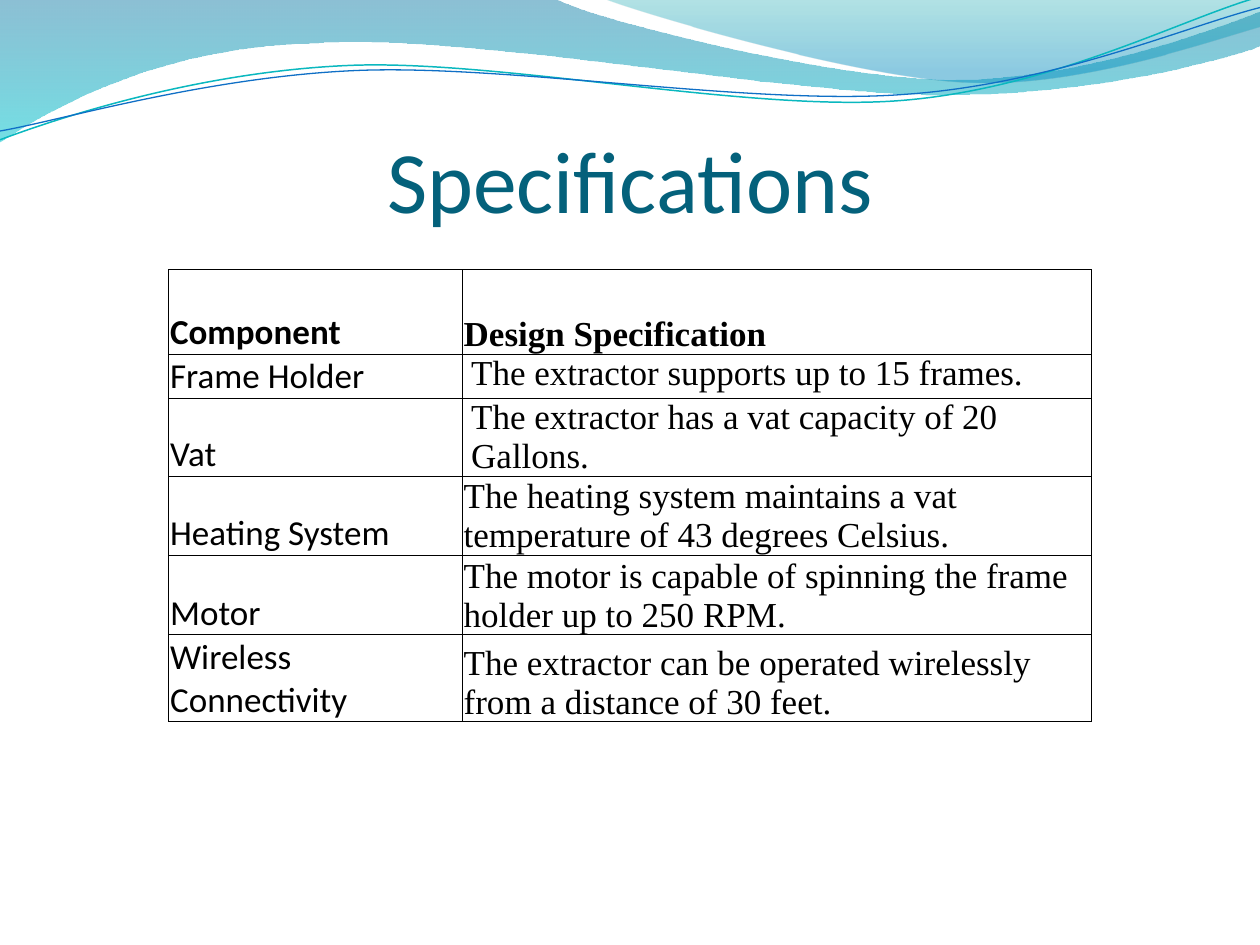
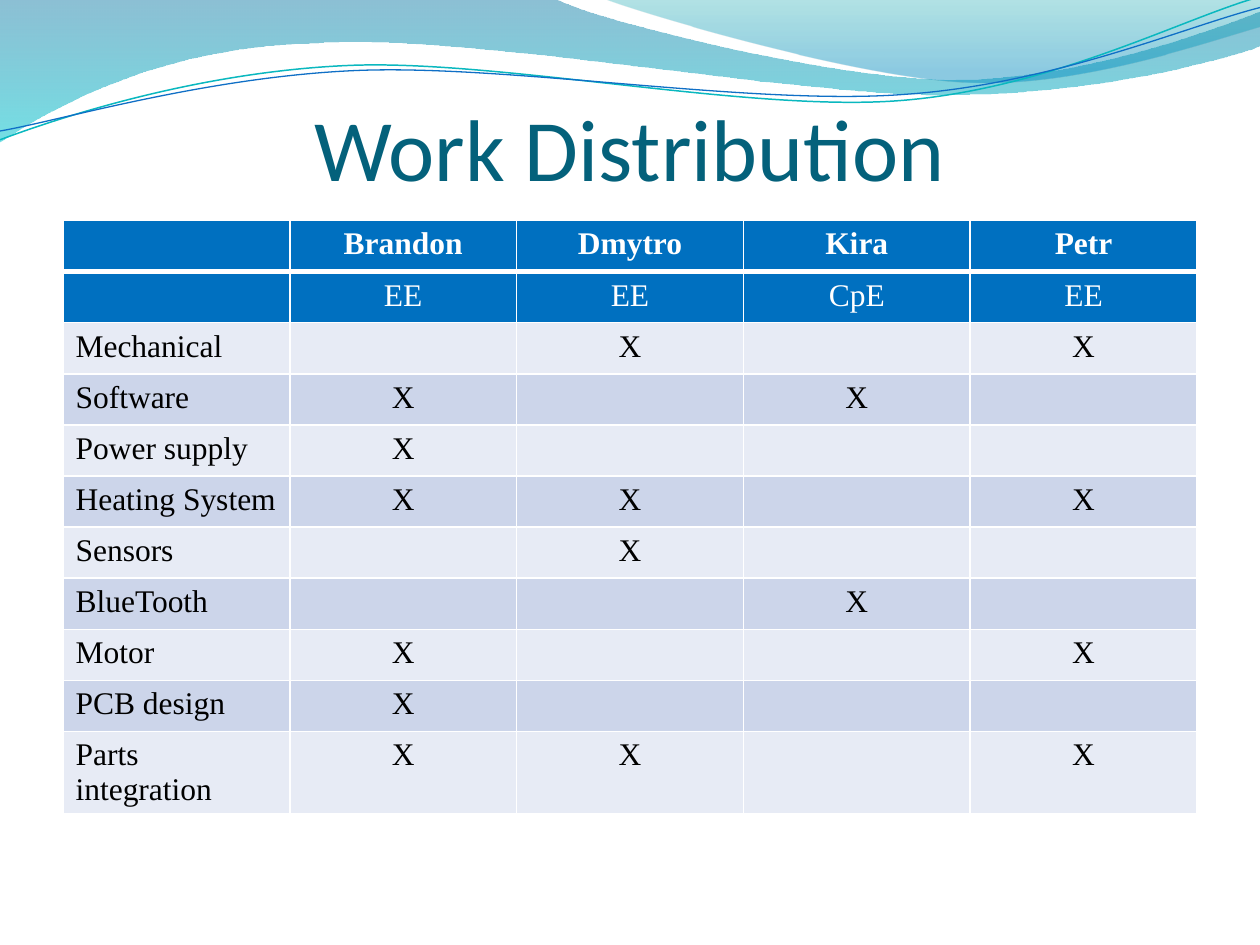
from dataclasses import dataclass

from lxml import etree
from pptx import Presentation
from pptx.dml.color import RGBColor
from pptx.enum.text import MSO_ANCHOR, MSO_AUTO_SIZE, PP_ALIGN
from pptx.oxml.ns import qn
from pptx.util import Inches, Pt

TOP, BOTTOM = MSO_ANCHOR.TOP, MSO_ANCHOR.BOTTOM
LEFT, CENTER = PP_ALIGN.LEFT, PP_ALIGN.CENTER
NO_AUTOFIT = MSO_AUTO_SIZE.NONE
TITLE_ONLY = 5


@dataclass(frozen=True)
class Theme:
    sans: str = "Calibri"
    serif: str = "Times New Roman"
    title: str = "04617B"
    black: str = "000000"
    white: str = "FFFFFF"
    header: str = "0070C0"
    bands: tuple = ("E7EBF5", "CCD5EA")
    wide_wave: tuple = ((0, "0074A1", 45), (1, "00C6CF", 55))
    right_wave: tuple = ((0, "00A1A9", 30), (0.8, "008BBF", 45))
    teal_line: str = "0AB8BF"
    blue_line: str = "0F6FC6"
    title_size: int = 50
    spec_size: int = 20
    work_size: int = 18


THEME = Theme()

WIDE_WAVE = [
    (0, 0), (4.4, -0.01),
    (4.76, 0.17, 6.64, 0.63, 7.58, 0.63),
    (8.53, 0.63, 9.58, 0.26, 10, 0.09),
    (10.01, 0.36),
    (9.83, 0.44, 8.7, 0.76, 7.46, 0.75),
    (6.22, 0.75, 3.82, 0.28, 2.57, 0.34),
    (1.29, 0.36, 0.46, 0.83, -0.01, 1.13),
    (0, 0),
]
RIGHT_WAVE = [
    (4.79, -0.01),
    (5.09, 0.11, 6.82, 0.62, 7.69, 0.65),
    (8.56, 0.69, 9.61, 0.32, 10, 0.21),
    (10, 0), (4.79, -0.01),
]
TEAL_CURVE = [
    (0, 1.11),
    (0.48, 0.93, 1.58, 0.57, 2.77, 0.52),
    (3.95, 0.47, 5.93, 0.89, 7.13, 0.8),
    (8.33, 0.71, 9.38, 0.15, 9.98, -0.02),
]
BLUE_CURVE = [
    (0, 1.04),
    (0.47, 0.96, 1.64, 0.61, 2.83, 0.56),
    (4.03, 0.51, 5.97, 0.84, 7.17, 0.75),
    (8.36, 0.67, 9.41, 0.21, 10, 0.06),
]

SPECIFICATIONS = [
    ("Component", "Design Specification"),
    ("Frame Holder", "The extractor supports up to 15 frames."),
    ("Vat", "The extractor has a vat capacity of 20 Gallons."),
    ("Heating System", "The heating system maintains a vat temperature of 43 degrees Celsius."),
    ("Motor", "The motor is capable of spinning the frame holder up to 250 RPM."),
    ("Wireless Connectivity", "The extractor can be operated wirelessly from a distance of 30 feet."),
]
SPEC_HEIGHTS = (0.67, 0.35, 0.62, 0.62, 0.63, 0.69)
INDENTED_SPEC_ROWS = (1, 2)

MEMBERS = [("Brandon", "EE"), ("Dmytro", "EE"), ("Kira", "CpE"), ("Petr", "EE")]
TASKS = [
    ("Mechanical", ("Dmytro", "Petr")),
    ("Software", ("Brandon", "Kira")),
    ("Power supply", ("Brandon",)),
    ("Heating System", ("Brandon", "Dmytro", "Petr")),
    ("Sensors", ("Dmytro",)),
    ("BlueTooth", ("Kira",)),
    ("Motor", ("Brandon", "Petr")),
    ("PCB design", ("Brandon",)),
    ("Parts integration", ("Brandon", "Dmytro", "Petr")),
]


def rgb(color):
    return RGBColor.from_string(color)


def segment_points(segment):
    return [(Inches(x), Inches(y)) for x, y in zip(segment[::2], segment[1::2])]


def bend_segments(sp, segments):
    lines = iter(list(sp.element.spPr.iter(qn("a:lnTo"))))
    for segment in segments:
        first = next(lines)
        if len(segment) == 6:
            bezier = etree.Element(qn("a:cubicBezTo"))
            first.addprevious(bezier)
            for line in (first, next(lines), next(lines)):
                bezier.append(line[0])
                line.getparent().remove(line)


def add_curve(s, segments, close):
    start, *rest = segments
    builder = s.shapes.build_freeform(*segment_points(start)[0])
    builder.add_line_segments([pt for seg in rest for pt in segment_points(seg)], close=close)
    sp = builder.convert_to_shape()
    bend_segments(sp, rest)
    sp.shadow.inherit = False
    return sp


def add_wave(s, segments, stops):
    sp = add_curve(s, segments, True)
    sp.line.fill.background()
    sp.fill.gradient()
    sp.fill.gradient_angle = 270
    for stop, (position, color, _) in zip(sp.fill.gradient_stops, stops):
        stop.position = position
        stop.color.rgb = rgb(color)
    for node, (_, _, opacity) in zip(sp.element.spPr.iter(qn("a:srgbClr")), stops):
        etree.SubElement(node, qn("a:alpha"), val=str(opacity * 1000))
    return sp


def add_wave_line(s, segments, color, width):
    sp = add_curve(s, segments, False)
    sp.fill.background()
    sp.line.color.rgb = rgb(color)
    sp.line.width = Pt(width)
    return sp


def put_waves_on_layout(s):
    waves = [
        add_wave(s, WIDE_WAVE, THEME.wide_wave),
        add_wave(s, RIGHT_WAVE, THEME.right_wave),
        add_wave_line(s, TEAL_CURVE, THEME.teal_line, 0.85),
        add_wave_line(s, BLUE_CURVE, THEME.blue_line, 0.75),
    ]
    for sp in waves:
        s.slide_layout.shapes.element.append(sp.element)


def format_runs(tf, font, size, color, bold=False, align=LEFT):
    for p in tf.paragraphs:
        p.alignment = align
        for r in p.runs:
            r.font.name = font
            r.font.size = Pt(size)
            r.font.bold = bold
            r.font.color.rgb = rgb(color)


def set_title(s, text, box):
    sp = s.shapes.title
    sp.left, sp.top, sp.width, sp.height = map(Inches, box)
    tf = sp.text_frame
    tf.text = text
    tf.auto_size = NO_AUTOFIT
    tf.word_wrap = True
    tf.vertical_anchor = BOTTOM
    tf.margin_left = tf.margin_right = tf.margin_bottom = 0
    tf.margin_top = Inches(0.05)
    format_runs(tf, THEME.sans, THEME.title_size, THEME.title, align=CENTER)


def set_borders(cell, color, width, **special):
    tc_pr = cell._tc.get_or_add_tcPr()
    for i, side in enumerate("LRTB"):
        ln = etree.Element(qn(f"a:ln{side}"), w=str(Pt(special.get(side, width))))
        fill = etree.SubElement(ln, qn("a:solidFill"))
        etree.SubElement(fill, qn("a:srgbClr"), val=color)
        tc_pr.insert(i, ln)


def add_plain_table(s, box, col_widths, row_heights):
    frame = s.shapes.add_table(len(row_heights), len(col_widths), *map(Inches, box))
    table = frame.table
    table.first_row = table.horz_banding = False
    for column, width in zip(table.columns, col_widths):
        column.width = Inches(width)
    for row, height in zip(table.rows, row_heights):
        row.height = Inches(height)
    return table


def add_spec_table(s, box):
    label_width = 2.33
    table = add_plain_table(s, box, (label_width, box[2] - label_width), SPEC_HEIGHTS)
    for i, texts in enumerate(SPECIFICATIONS):
        for j, (text, font) in enumerate(zip(texts, (THEME.sans, THEME.serif))):
            cell = table.cell(i, j)
            indented = j == 1 and i in INDENTED_SPEC_ROWS
            cell.text = text
            cell.fill.background()
            cell.vertical_anchor = TOP if indented else BOTTOM
            cell.margin_left = cell.margin_right = Inches(0.07 if indented else 0.01)
            cell.margin_top = Inches(0 if indented else 0.01)
            cell.margin_bottom = 0
            format_runs(cell.text_frame, font, THEME.spec_size, THEME.black, bold=i == 0)
            set_borders(cell, THEME.black, 0.5)


def add_work_table(s, box):
    names, majors = zip(*MEMBERS)
    rows = [("", *names), ("", *majors)]
    rows += [(task, *("X" if name in team else "" for name in names)) for task, team in TASKS]
    columns, single_rows = len(rows[0]), len(rows) - 1
    last_height = 0.65
    heights = [(box[3] - last_height) / single_rows] * single_rows + [last_height]
    table = add_plain_table(s, box, [box[2] / columns] * columns, heights)
    for i, texts in enumerate(rows):
        heading = i < 2
        thick = {0: {"B": 3}, 1: {"T": 3}}.get(i, {})
        for j, text in enumerate(texts):
            cell = table.cell(i, j)
            cell.text = text
            cell.fill.solid()
            cell.fill.fore_color.rgb = rgb(THEME.header if heading else THEME.bands[i % 2])
            format_runs(cell.text_frame, THEME.serif, THEME.work_size,
                        THEME.white if heading else THEME.black,
                        bold=i == 0, align=CENTER if j else LEFT)
            set_borders(cell, THEME.white, 1, **thick)


def add_specifications_slide(prs):
    s = prs.slides.add_slide(prs.slide_layouts[TITLE_ONLY])
    set_title(s, "Specifications", (0.5, 0.58, 9, 1.25))
    add_spec_table(s, (1.34, 2.14, 7.32, sum(SPEC_HEIGHTS)))
    return s


def add_work_slide(prs):
    s = prs.slides.add_slide(prs.slide_layouts[TITLE_ONLY])
    set_title(s, "Work Distribution", (0.5, -0.17, 9, 1.75))
    add_work_table(s, (0.5, 1.75, 9, 4.7))


def main():
    prs = Presentation()
    prs.slide_width, prs.slide_height = Inches(10), Inches(7.5)
    put_waves_on_layout(add_specifications_slide(prs))
    add_work_slide(prs)
    prs.save("out.pptx")


if __name__ == "__main__":
    main()
